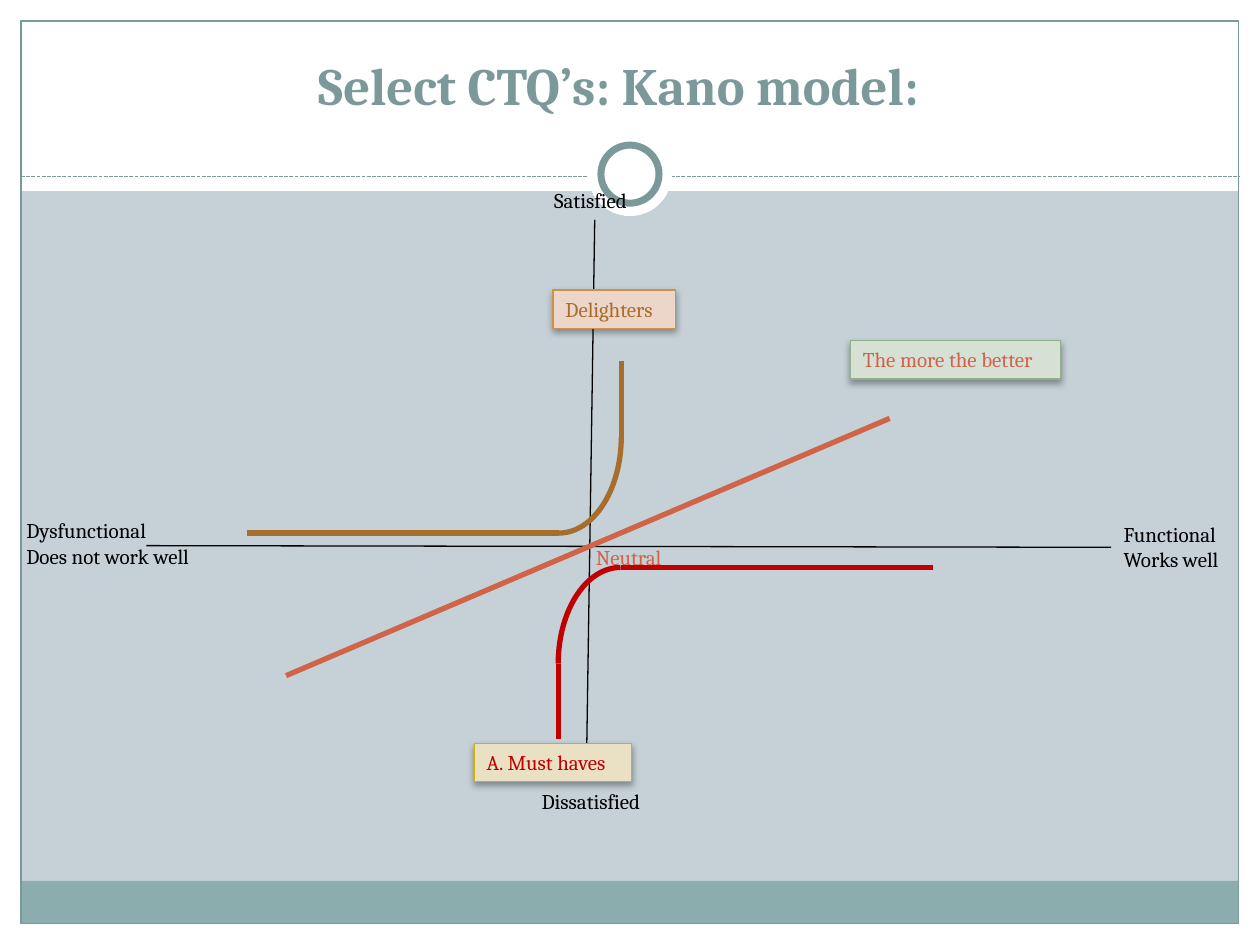
from lxml.etree import SubElement
from pptx import Presentation
from pptx.dml.color import RGBColor
from pptx.enum.dml import MSO_LINE
from pptx.enum.shapes import MSO_CONNECTOR, MSO_SHAPE
from pptx.enum.text import MSO_ANCHOR, MSO_AUTO_SIZE, PP_ALIGN
from pptx.oxml import parse_xml
from pptx.oxml.ns import nsdecls, qn
from pptx.util import Pt

COLORS = {
    "background": "C5D1D7", "white": "FFFFFF", "black": "000000",
    "frame": "7C999A", "footer": "8CADAE",
    "must": "C00000", "must_fill": "EAE1C5", "must_line": "CCB400",
    "more": "D16349", "more_fill": "D6E0D5", "more_line": "8FB08C",
    "delight": "A96D2B", "delight_fill": "ECD6C9", "delight_line": "D19049",
}
SLIDE_WIDTH, SLIDE_HEIGHT = 720, 540
FONT = "Cambria"
TEXT_FRAME = {"word_wrap": False, "auto_size": MSO_AUTO_SIZE.SHAPE_TO_FIT_TEXT,
              "vertical_anchor": MSO_ANCHOR.TOP}
TITLE_FRAME = {"word_wrap": True, "auto_size": MSO_AUTO_SIZE.NONE,
               "vertical_anchor": MSO_ANCHOR.BOTTOM}


def color(name):
    return RGBColor.from_string(COLORS[name])


def set_all(target, values):
    for name, value in values.items():
        setattr(target, name, value)


def add_line(shapes, start, end, line_color, width=0.75):
    line = shapes.add_connector(MSO_CONNECTOR.STRAIGHT, *map(Pt, start + end))
    line.line.color.rgb = color(line_color)
    line.line.width = Pt(width)
    SubElement(line._element.spPr, qn("a:effectLst"))
    return line


def add_box(shapes, box, fill=None, outline=None, width=0.75, kind=MSO_SHAPE.RECTANGLE):
    shape = shapes.add_shape(kind, *map(Pt, box))
    shape.shadow.inherit = False
    if fill:
        shape.fill.solid()
        shape.fill.fore_color.rgb = color(fill)
    else:
        shape.fill.background()
    if outline:
        shape.line.color.rgb = color(outline)
        shape.line.width = Pt(width)
    else:
        shape.line.fill.background()
    return shape


def write_text(shape, text, text_color, size=12, bold=False, align=PP_ALIGN.LEFT,
               frame=TEXT_FRAME):
    shape.text_frame.text = text
    set_all(shape.text_frame, frame)
    for paragraph in shape.text_frame.paragraphs:
        paragraph.alignment = align
        for run in paragraph.runs:
            set_all(run.font, {"name": FONT, "size": Pt(size), "bold": bold})
            run.font.color.rgb = color(text_color)


def add_label(shapes, box, text, text_color="black"):
    label = shapes.add_textbox(*map(Pt, box))
    write_text(label, text, text_color)
    return label


def add_card(shapes, box, text, theme):
    card = add_box(shapes, box, theme + "_fill", theme + "_line")
    write_text(card, text, theme)
    card._element.spPr.find(qn("a:effectLst")).append(parse_xml(
        f'<a:outerShdw {nsdecls("a")} blurRad="{Pt(4)}" dist="{Pt(2)}" dir="5400000" '
        'rotWithShape="0"><a:srgbClr val="000000"><a:alpha val="35000"/></a:srgbClr>'
        '</a:outerShdw>'))


def add_branch(shapes, corner, direction, line_color):
    """Bent curve from its outer corner: direction 1 opens right and down, -1 left and up."""
    group = shapes.add_group_shape().shapes
    x, y = corner
    radius_x, radius_y = 35.6, 55

    def offset(across, down):
        return x + direction * across, y + direction * down

    center_x, center_y = offset(radius_x, radius_y)
    arc = add_box(group, (center_x - radius_y, center_y - radius_x, 2 * radius_y, 2 * radius_x),
                  None, line_color, 3, MSO_SHAPE.ARC)
    arc.rotation = 270 if direction == 1 else 90
    add_line(group, offset(radius_x, 0), offset(214, 0), line_color, 3)
    add_line(group, offset(0, 98.2), offset(0, radius_y), line_color, 3)


def add_frame(shapes, box):
    """White margins, footer band, border, dashed divider and ring."""
    left, top, width, height = box
    margin, header = 12.1, 109.2
    right, bottom = left + width, top + height
    inner = (left + margin, top + margin, width - 2 * margin, height - 2 * margin)
    for strip in ((left, bottom - margin, width, margin), (left, top, width, header),
                  (left, top, margin, height), (right - margin, top, margin, height)):
        add_box(shapes, strip, "white")
    add_box(shapes, (inner[0], bottom - margin - 24.5, inner[2], 24.5), "footer")
    add_box(shapes, inner, None, "frame")
    divider_y = top + 100.8
    divider = add_line(shapes, (left + margin, divider_y), (right - margin, divider_y), "frame")
    divider.line.dash_style = MSO_LINE.SQUARE_DOT
    for diameter, outline in ((48, None), (33.2, "frame")):
        add_box(shapes, (left + (width - diameter) / 2, top + 99.5 - diameter / 2,
                         diameter, diameter), "white", outline, 4, MSO_SHAPE.OVAL)


def add_title(slide, box, text):
    title = slide.shapes.title
    set_all(title, dict(zip(("left", "top", "width", "height"), map(Pt, box))))
    write_text(title, text, "frame", 30, True, PP_ALIGN.CENTER, TITLE_FRAME)
    slide.shapes._spTree.append(title._element)  # in front of the white header


def add_kano_chart(shapes, box):
    left, top, width, height = box

    def place(x, y, *size):
        return (left + x, top + y) + size

    vertical = add_line(shapes, place(332, 21.6), place(327, 342), "black")
    horizontal = add_line(shapes, place(75.6, 208), place(width - 74, 209), "black")
    add_branch(shapes, place(311, 220.4), 1, "must")
    add_branch(shapes, place(347, 200.8), -1, "delight")
    add_line(shapes, place(155.5, 282.3), place(500.4, 135.3), "more", 3)

    add_card(shapes, place(263, 321, 90, 22), "A. Must haves", "must")
    add_card(shapes, place(478, 90.8, 120, 22), "The more the better", "more")
    add_card(shapes, place(308, 62, 70, 22), "Delighters", "delight")

    satisfied = add_label(shapes, place(301.6, 0, 60.5, 21.8), "Satisfied")
    add_label(shapes, place(294.4, height - 21.8, 76.3, 21.8), "Dissatisfied")
    add_label(shapes, place(0, 188.6, 116, 36.3), "Dysfunctional\nDoes not work well")
    functional = add_label(shapes, place(width - 74, 190.8, 74, 36.3), "Functional\nWorks well")
    add_label(shapes, place(325.4, 203.8, 55.4, 21.8), "Neutral", "more")
    vertical.begin_connect(satisfied, 2)
    horizontal.end_connect(functional, 1)


def main():
    presentation = Presentation()
    presentation.slide_width, presentation.slide_height = Pt(SLIDE_WIDTH), Pt(SLIDE_HEIGHT)
    slide = presentation.slides.add_slide(presentation.slide_layouts[5])
    slide.background.fill.solid()
    slide.background.fill.fore_color.rgb = color("background")
    add_frame(slide.shapes, (0, 0, SLIDE_WIDTH, SLIDE_HEIGHT))
    add_title(slide, (43.2, -8.6, 620.6, 78.5), "Select CTQ’s: Kano model:")
    add_kano_chart(slide.shapes, (8, 103.8, 701, 365))
    presentation.save("out.pptx")


if __name__ == "__main__":
    main()
